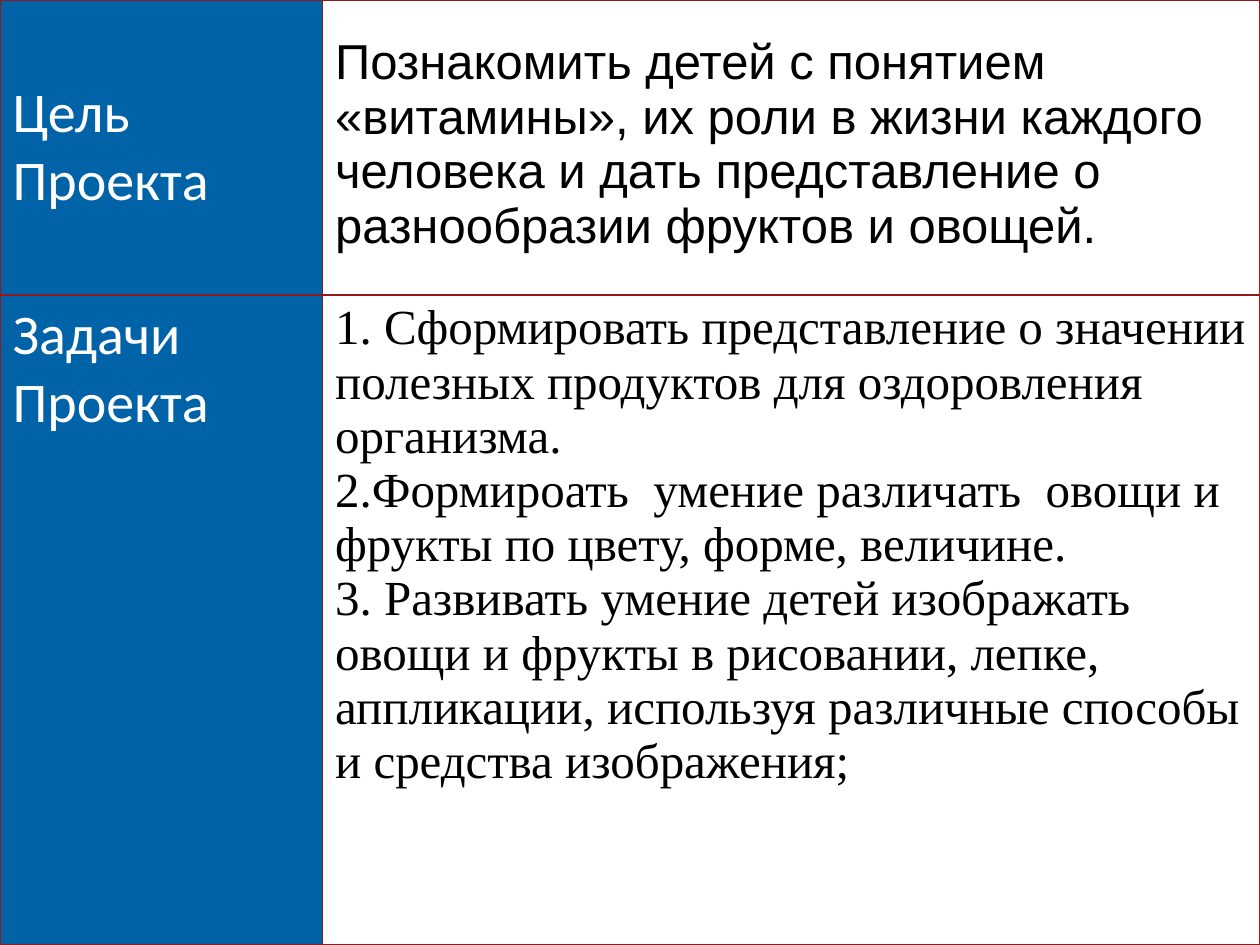
from lxml import etree
from pptx import Presentation
from pptx.dml.color import RGBColor
from pptx.enum import text
from pptx.oxml.ns import qn
from pptx.util import Inches, Pt

COLORS = {"label": "0062A7", "body": "FFFFFF", "border": "921A1D",
          "label_text": "FFFFFF", "body_text": "000000"}
COLS = [2.56, 7.44]
ROWS = [2.34, 5.16]
LABEL = dict(size=32, font="Calibri", color="label_text", fill="label")
BODY = dict(size=28, color="body_text", fill="body")

CELLS = [
    [(["Цель Проекта"], dict(LABEL, anchor=text.MSO_ANCHOR.MIDDLE)),
     (["Познакомить детей с понятием «витамины», их роли в жизни каждого "
       "человека и дать представление о разнообразии фруктов и овощей."],
      dict(BODY, font="Arial", top=0.28))],
    [(["Задачи Проекта"], LABEL),
     (["1. Сформировать представление о значении полезных продуктов для "
       "оздоровления организма.",
       "2.Формироать  умение различать  овощи и фрукты по цвету, форме, "
       "величине.",
       "3. Развивать умение детей изображать овощи и фрукты в рисовании, "
       "лепке, аппликации, используя различные способы и средства "
       "изображения;"],
      dict(BODY, font="Times New Roman"))],
]


def rgb(name):
    return RGBColor.from_string(COLORS[name])


def add_borders(cell, color, width=1):
    tc_pr = cell._tc.get_or_add_tcPr()
    for i, side in enumerate(("lnL", "lnR", "lnT", "lnB")):
        ln = etree.Element(qn(f"a:{side}"), w=str(Pt(width)))
        fill = etree.SubElement(ln, qn("a:solidFill"))
        etree.SubElement(fill, qn("a:srgbClr"), val=COLORS[color])
        tc_pr.insert(i, ln)


def write_cell(cell, lines, size, font, color, fill,
               anchor=text.MSO_ANCHOR.TOP, top=0.05):
    cell.fill.solid()
    cell.fill.fore_color.rgb = rgb(fill)
    cell.vertical_anchor = anchor
    cell.margin_left = cell.margin_right = Inches(0.1)
    cell.margin_top, cell.margin_bottom = Inches(top), Inches(0.05)
    tf = cell.text_frame
    for i, line in enumerate(lines):
        p = tf.add_paragraph() if i else tf.paragraphs[0]
        r = p.add_run()
        r.text = line
        r.font.size = Pt(size)
        r.font.name = font
        r.font.bold = False
        r.font.color.rgb = rgb(color)
    add_borders(cell, "border")


prs = Presentation()
prs.slide_width, prs.slide_height = Inches(10), Inches(7.5)
s = prs.slides.add_slide(prs.slide_layouts[6])
table = s.shapes.add_table(len(ROWS), len(COLS), 0, 0,
                           prs.slide_width, prs.slide_height).table
for col, width in zip(table.columns, COLS):
    col.width = Inches(width)
for row, height, contents in zip(table.rows, ROWS, CELLS):
    row.height = Inches(height)
    for cell, (lines, style) in zip(row.cells, contents):
        write_cell(cell, lines, **style)

prs.save("out.pptx")
